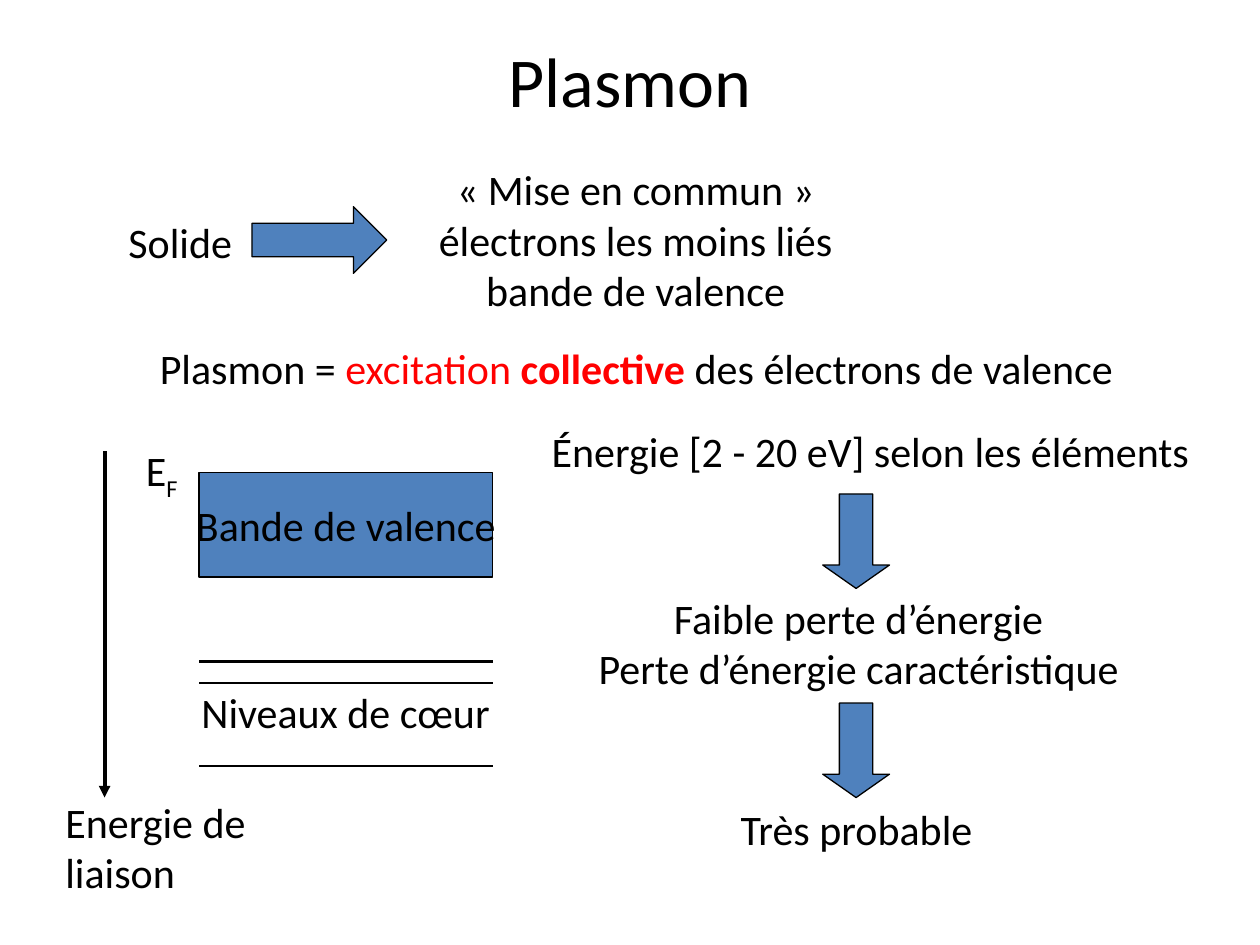
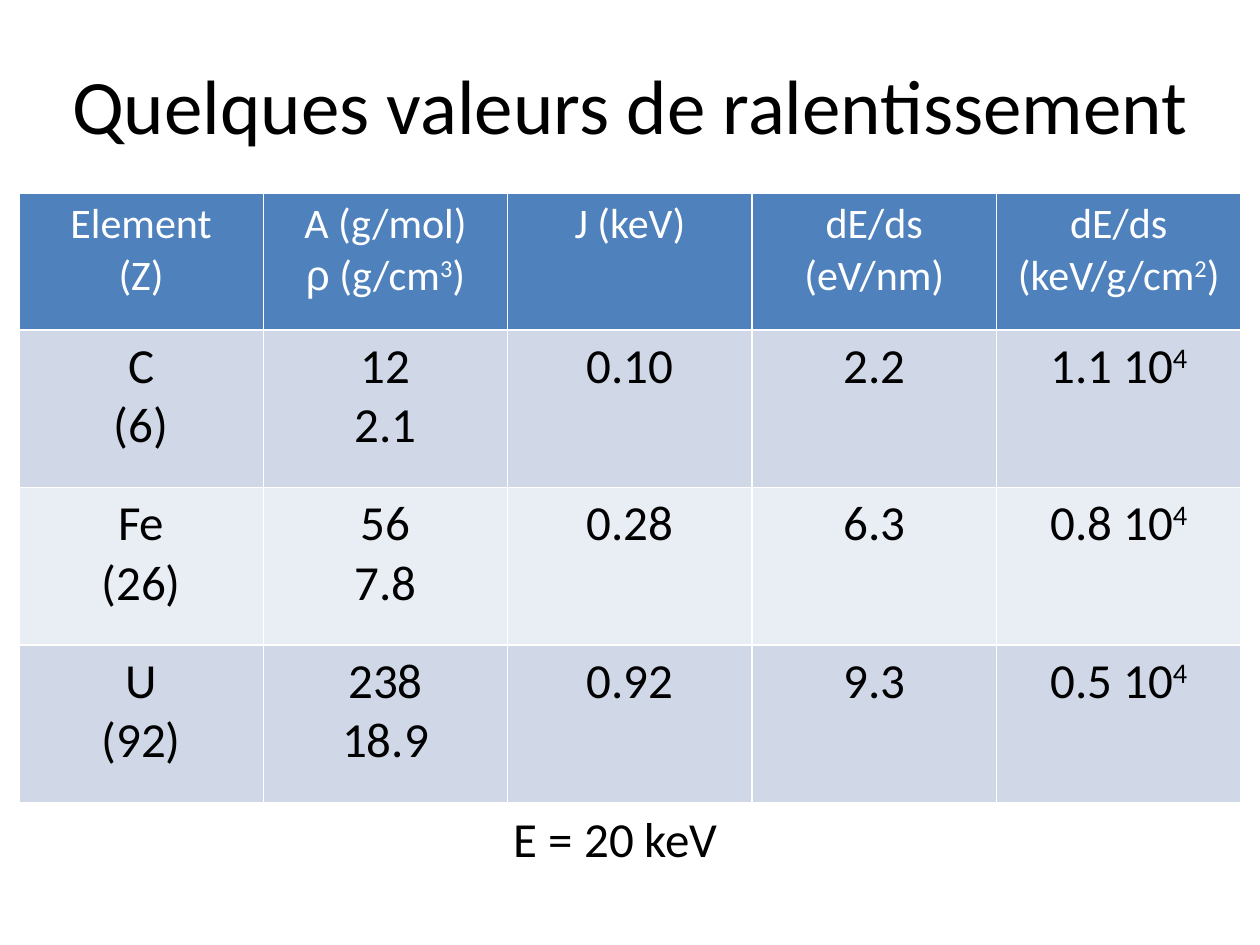
from dataclasses import dataclass

from lxml import etree
from pptx import Presentation
from pptx.dml.color import RGBColor
from pptx.enum.shapes import MSO_CONNECTOR, MSO_SHAPE
from pptx.enum.text import MSO_ANCHOR, MSO_AUTO_SIZE, PP_ALIGN
from pptx.oxml.ns import qn
from pptx.util import Inches, Pt

LEFT, CENTER = PP_ALIGN.LEFT, PP_ALIGN.CENTER
MIDDLE = MSO_ANCHOR.MIDDLE
FIT_SHAPE, FIT_NONE = MSO_AUTO_SIZE.SHAPE_TO_FIT_TEXT, MSO_AUTO_SIZE.NONE
RECT, DOWN, RIGHT = MSO_SHAPE.RECTANGLE, MSO_SHAPE.DOWN_ARROW, MSO_SHAPE.RIGHT_ARROW
STRAIGHT = MSO_CONNECTOR.STRAIGHT
TITLE_ONLY = 5


@dataclass(frozen=True)
class Theme:
    font: str = "Calibri"
    greek_font: str = "Arial"
    black: str = "000000"
    white: str = "FFFFFF"
    red: str = "FF0000"
    blue: str = "4F81BD"
    bands: tuple = ("D0D8E8", "E9EDF4")
    text: int = 24
    large: int = 28
    outline: float = 0.75
    level: float = 1.5
    axis: float = 2.25
    border: float = 1


THEME = Theme()

# Run styles: a paragraph is a string or a list of strings and (text, style) pairs
STYLES = {
    "red": {"color": THEME.red},
    "strong": {"color": THEME.red, "bold": True},
    "greek": {"font": THEME.greek_font},
    "sub": {"baseline": -25000},
    "sup": {"baseline": 30000},
}

# Content of the plasmon slide: text, box, alignment, wrapping
PLASMON_TITLE = ("Plasmon", (0.75, 0.01, 8.5, 1.25), 40)
PLASMON_TEXTS = [
    (["Solide"], (0.92, 1.67, 1.05, 0.5), LEFT, False),
    (["«\u00a0Mise en commun\u00a0» électrons les moins liés bande de valence"],
     (3.33, 1.25, 3.43, 1.31), CENTER, True),
    ([["Plasmon = ", ("excitation ", "red"), ("collective ", "strong"),
       "des électrons de valence"]], (1.17, 2.67, 7.84, 0.5), LEFT, False),
    (["Énergie [2 - 20 eV] selon les éléments"], (4.28, 3.33, 5.3, 0.5), LEFT, False),
    (["Faible perte d’énergie", "Perte d’énergie caractéristique"],
     (4.63, 4.65, 4.37, 0.91), CENTER, False),
    (["Très probable"], (5.78, 6.33, 2.04, 0.5), LEFT, False),
    ([["E", ("F", "sub")]], (1.06, 3.48, 0.47, 0.5), LEFT, False),
    (["Niveaux de cœur"], (1.5, 5.4, 2.51, 0.5), LEFT, False),
    (["Energie de liaison"], (0.42, 6.27, 1.85, 0.91), LEFT, True),
]
BLOCK_ARROWS = [
    (RIGHT, (2, 1.64, 1.07, 0.53), 0.5),
    (DOWN, (6.53, 3.92, 0.53, 0.75), 0.35),
    (DOWN, (6.53, 5.58, 0.53, 0.75), 0.35),
]
BAND_TEXT, BAND_BOX = "Bande de valence", (1.58, 3.75, 2.33, 0.83)
CORE_LEVELS = (5.25, 5.42, 6.08)
ENERGY_AXIS = (0.83, 3.58, 0.83, 6.33)

# Content of the stopping-power slide
STOPPING_TITLE = ("Quelques valeurs de ralentissement", (0.37, 0.2, 9.27, 1.25), 44)
HEADERS = [
    ["Element", "(Z)"],
    ["A (g/mol)", [("ρ", "greek"), " (g/cm", ("3", "sup"), ")"]],
    ["J (keV)"],
    ["dE/ds", "(eV/nm)"],
    ["dE/ds", ["(keV/g/cm", ("2", "sup"), ")"]],
]
ELEMENTS = [  # symbol, Z, A, density, J, eV/nm, 10⁴ keV/g/cm²
    ("C", "6", "12", "2.1", "0.10", "2.2", "1.1"),
    ("Fe", "26", "56", "7.8", "0.28", "6.3", "0.8"),
    ("U", "92", "238", "18.9", "0.92", "9.3", "0.5"),
]
TABLE_POS, COL_WIDTH = (0.15, 1.53), 1.94
HEADER_HEIGHT, ROW_HEIGHT = 1.09, 1.25
BEAM_ENERGY, BEAM_BOX = "E = 20 keV", (3.98, 6.37, 2.24, 0.57)


# Text helpers
def rgb(color):
    return RGBColor.from_string(color)


def inches(values):
    return [Inches(v) for v in values]


def write(tf, paragraphs, size, color=THEME.black, align=CENTER):
    for i, content in enumerate(paragraphs):
        p = tf.paragraphs[0] if i == 0 else tf.add_paragraph()
        p.alignment = align
        for part in [content] if isinstance(content, str) else content:
            text, style = (part, None) if isinstance(part, str) else part
            look = STYLES.get(style, {})
            r = p.add_run()
            r.text = text
            r.font.name = look.get("font", THEME.font)
            r.font.size = Pt(size)
            r.font.bold = look.get("bold", False)
            r.font.color.rgb = rgb(look.get("color", color))
            if "baseline" in look:
                r._r.get_or_add_rPr().set("baseline", str(look["baseline"]))


def add_text(slide, paragraphs, box, align=LEFT, wrap=True, size=THEME.text):
    tf = slide.shapes.add_textbox(*inches(box)).text_frame
    tf.word_wrap = wrap
    tf.auto_size = FIT_SHAPE
    write(tf, paragraphs, size, align=align)


def add_titled_slide(prs, text, box, size):
    slide = prs.slides.add_slide(prs.slide_layouts[TITLE_ONLY])
    title = slide.shapes.title
    title.left, title.top, title.width, title.height = inches(box)
    tf = title.text_frame
    tf.vertical_anchor = MIDDLE
    tf.auto_size = FIT_NONE
    write(tf, [text], size)
    return slide


# Drawing helpers
def add_block(slide, kind, box):
    sp = slide.shapes.add_shape(kind, *inches(box))
    sp.shadow.inherit = False
    sp.fill.solid()
    sp.fill.fore_color.rgb = rgb(THEME.blue)
    sp.line.color.rgb = rgb(THEME.black)
    sp.line.width = Pt(THEME.outline)
    return sp


def add_line(slide, ends, width, arrow=False):
    line = slide.shapes.add_connector(STRAIGHT, *inches(ends))
    line.line.color.rgb = rgb(THEME.black)
    line.line.width = Pt(width)
    if arrow:
        etree.SubElement(line.line._get_or_add_ln(), qn("a:tailEnd"), type="triangle")
    etree.SubElement(line._element.spPr, qn("a:effectLst"))


def style_cell(cell, fill):
    tcPr = cell._tc.get_or_add_tcPr()
    for side in ("lnL", "lnR", "lnT", "lnB"):
        ln = etree.SubElement(tcPr, qn(f"a:{side}"), w=str(Pt(THEME.border)))
        paint = etree.SubElement(ln, qn("a:solidFill"))
        etree.SubElement(paint, qn("a:srgbClr"), val=THEME.white)
    cell.fill.solid()
    cell.fill.fore_color.rgb = rgb(fill)


# Slides
def build_plasmon(prs):
    slide = add_titled_slide(prs, *PLASMON_TITLE)
    for kind, box, head in BLOCK_ARROWS:
        sp = add_block(slide, kind, box)
        sp.adjustments[0], sp.adjustments[1] = 0.5, head

    # Energy diagram
    band = add_block(slide, RECT, BAND_BOX)
    tf = band.text_frame
    tf.word_wrap = False
    tf.vertical_anchor = MIDDLE
    write(tf, [BAND_TEXT], THEME.text)
    left, _, width, _ = BAND_BOX
    for y in CORE_LEVELS:
        add_line(slide, (left, y, left + width, y), THEME.level)
    add_line(slide, ENERGY_AXIS, THEME.axis, arrow=True)

    for paragraphs, box, align, wrap in PLASMON_TEXTS:
        add_text(slide, paragraphs, box, align, wrap)


def build_stopping(prs):
    slide = add_titled_slide(prs, *STOPPING_TITLE)
    rows = [HEADERS] + [
        [[symbol, f"({z})"], [mass, density], [j], [loss], [[f"{power} 10", ("4", "sup")]]]
        for symbol, z, mass, density, j, loss, power in ELEMENTS
    ]
    heights = [HEADER_HEIGHT] + [ROW_HEIGHT] * len(ELEMENTS)
    size = (COL_WIDTH * len(HEADERS), sum(heights))
    table = slide.shapes.add_table(len(rows), len(HEADERS), *inches(TABLE_POS + size)).table
    for column in table.columns:
        column.width = Inches(COL_WIDTH)
    for i, (row, height) in enumerate(zip(rows, heights)):
        table.rows[i].height = Inches(height)
        if i == 0:
            fill, color, points = THEME.blue, THEME.white, THEME.text
        else:
            fill, color, points = THEME.bands[(i - 1) % 2], THEME.black, THEME.large
        for j, paragraphs in enumerate(row):
            cell = table.cell(i, j)
            style_cell(cell, fill)
            write(cell.text_frame, paragraphs, points, color)
    add_text(slide, [BEAM_ENERGY], BEAM_BOX, size=THEME.large)


def main():
    prs = Presentation()
    prs.slide_width, prs.slide_height = Inches(10), Inches(7.5)
    build_plasmon(prs)
    build_stopping(prs)
    prs.save("out.pptx")


if __name__ == "__main__":
    main()
